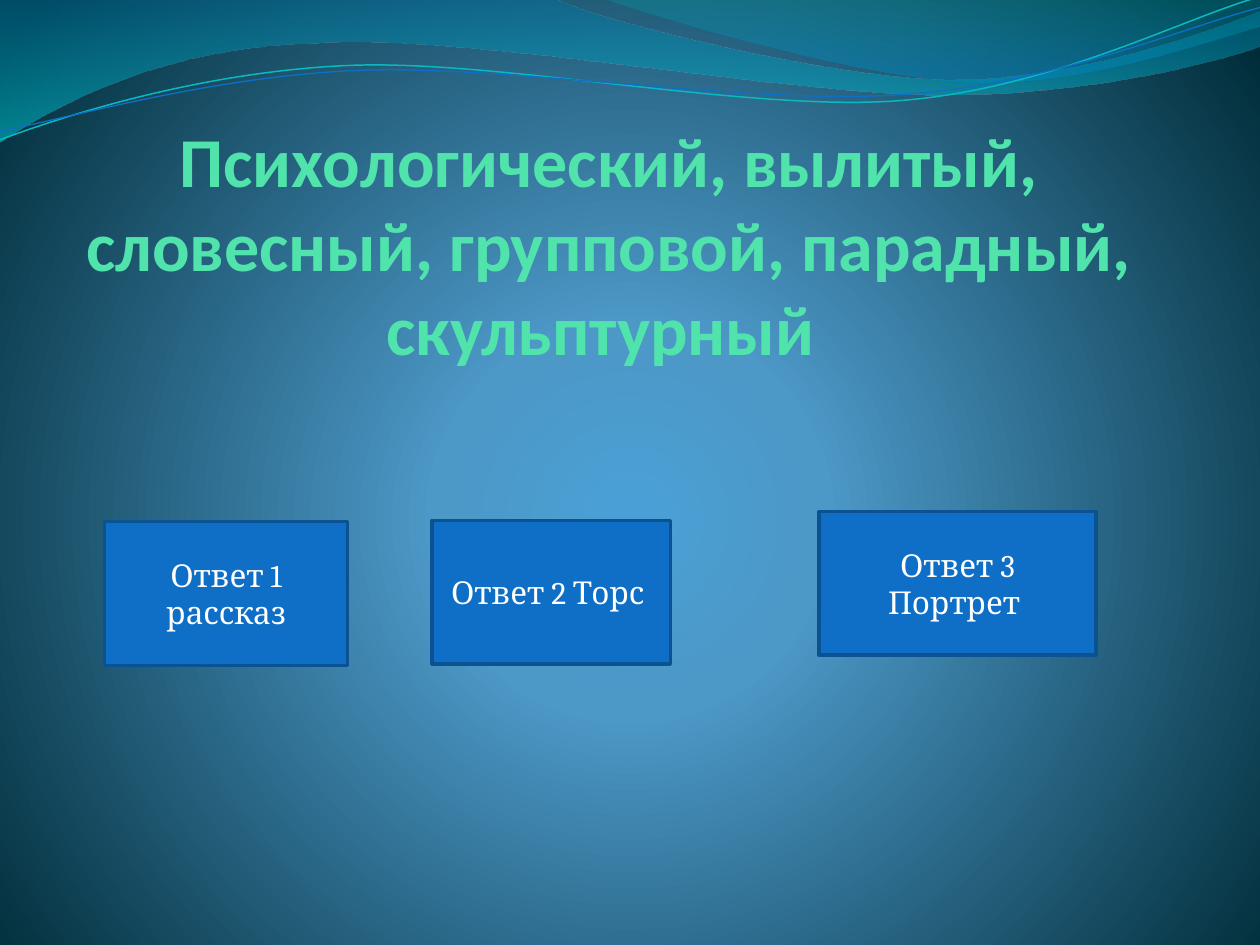
from dataclasses import dataclass

from lxml import etree
from pptx import Presentation
from pptx.dml.color import RGBColor
from pptx.enum.shapes import MSO_SHAPE
from pptx.enum.text import MSO_ANCHOR, MSO_AUTO_SIZE, PP_ALIGN
from pptx.oxml.ns import nsdecls, qn
from pptx.util import Inches, Pt

BUTTON = MSO_SHAPE.ACTION_BUTTON_CUSTOM
CENTER = PP_ALIGN.CENTER
BOTTOM, MIDDLE = MSO_ANCHOR.BOTTOM, MSO_ANCHOR.MIDDLE
NO_AUTOFIT = MSO_AUTO_SIZE.NONE
TITLE_ONLY = 5


@dataclass(frozen=True)
class Theme:
    """Colours, fonts and sizes of the slide."""
    title: str = "50E3AC"
    button: str = "0F6FC6"
    button_line: str = "0B5292"
    button_text: str = "FFFFFF"
    title_font: str = "Calibri"
    button_font: str = "Cambria"
    title_size: int = 40
    button_size: int = 18
    button_line_width: int = 2
    background: tuple = ((0, "4AA0D6", 100), (25, "4C98C7", 100), (100, "002C38", 100))
    left_wave: tuple = ((0, "0074A1", 45), (100, "00C6CF", 55))
    right_wave: tuple = ((0, "00A1A9", 30), (80, "008BBF", 45))
    upper_line: tuple = ("0AB8BF", 0.85)
    lower_line: tuple = ("0F6FC6", 0.75)


THEME = Theme()
LINEAR = '<a:lin ang="5400000" scaled="1"/>'
CIRCLE = ('<a:path path="circle"><a:fillToRect l="10000" t="110000" '
          'r="10000" b="100000"/></a:path>')

LEFT_WAVE = [
    (0, 0), (4.4, -0.01),
    (4.76, 0.17, 6.64, 0.63, 7.58, 0.63), (8.53, 0.63, 9.58, 0.26, 10, 0.09),
    (10.01, 0.36),
    (9.83, 0.44, 8.7, 0.76, 7.46, 0.75), (6.22, 0.75, 3.82, 0.28, 2.57, 0.34),
    (1.29, 0.36, 0.46, 0.83, -0.01, 1.13), (0, 0),
]
RIGHT_WAVE = [
    (4.79, -0.01),
    (5.09, 0.11, 6.82, 0.62, 7.69, 0.65), (8.56, 0.69, 9.61, 0.32, 10, 0.21),
    (10, 0), (4.79, -0.01),
]
UPPER_LINE = [
    (0, 1.11), (0.48, 0.93, 1.58, 0.57, 2.77, 0.52),
    (3.95, 0.47, 5.93, 0.89, 7.13, 0.8), (8.33, 0.71, 9.38, 0.15, 9.98, -0.02),
]
LOWER_LINE = [
    (0, 1.04), (0.47, 0.96, 1.64, 0.61, 2.83, 0.56),
    (4.03, 0.51, 5.97, 0.84, 7.17, 0.75), (8.36, 0.67, 9.41, 0.21, 10, 0.06),
]
TITLE = "Психологический, вылитый, словесный, групповой, парадный, скульптурный "
TITLE_BOX = (0.58, 1.44, 8.5, 1.49)
ANSWERS = [
    (("Ответ 1", "рассказ"), (0.83, 4.14, 1.93, 1.14)),
    (("Ответ 2 Торс ",), (3.43, 4.13, 1.89, 1.14)),
    (("Ответ 3 Портрет ",), (6.5, 4.06, 2.2, 1.14)),
]


def set_gradient(fill, element, stops, direction):
    """Give the fill found in element the listed stops of position, colour and opacity."""
    fill.gradient()
    old = element.find(".//" + qn("a:gradFill"))
    new = etree.fromstring(
        f'<a:gradFill {nsdecls("a")} rotWithShape="1"><a:gsLst/>{direction}</a:gradFill>')
    for position, color, opacity in stops:
        stop = etree.SubElement(new[0], qn("a:gs"), pos=str(position * 1000))
        stop_color = etree.SubElement(stop, qn("a:srgbClr"), val=color)
        if opacity < 100:
            etree.SubElement(stop_color, qn("a:alpha"), val=str(opacity * 1000))
    old.getparent().replace(old, new)


def add_outline(shapes, segments, closed):
    """Add a freeform whose six-number segments are cubic curves."""
    anchors = [(Inches(segment[-2]), Inches(segment[-1])) for segment in segments]
    builder = shapes.build_freeform(*anchors[0], scale=1.0)
    builder.add_line_segments(anchors[1:], close=closed)
    shape = builder.convert_to_shape()
    shape.shadow.inherit = False
    steps = list(shape.element.iter(qn("a:lnTo")))
    for step, segment in zip(steps, segments[1:]):
        if len(segment) == 6:
            curve = etree.Element(qn("a:cubicBezTo"))
            for x, y in zip(segment[::2], segment[1::2]):
                etree.SubElement(curve, qn("a:pt"), x=str(Inches(x) - shape.left),
                                 y=str(Inches(y) - shape.top))
            step.getparent().replace(step, curve)
    return shape


def add_waves(slide):
    """Draw the translucent waves and the two thin lines over them."""
    for segments, stops in ((LEFT_WAVE, THEME.left_wave), (RIGHT_WAVE, THEME.right_wave)):
        wave = add_outline(slide.shapes, segments, True)
        set_gradient(wave.fill, wave.element, stops, LINEAR)
        wave.line.fill.background()
    group = slide.shapes.add_group_shape()
    for segments, (color, width) in ((UPPER_LINE, THEME.upper_line),
                                     (LOWER_LINE, THEME.lower_line)):
        line = add_outline(group.shapes, segments, False)
        line.fill.background()
        line.line.color.rgb = RGBColor.from_string(color)
        line.line.width = Pt(width)


def write_text(shape, lines, color, frame_format, font_format):
    """Write centred paragraphs with the given frame and font formats."""
    frame = shape.text_frame
    for name, value in frame_format.items():
        setattr(frame, name, value)
    frame.text = "\n".join(lines)
    for paragraph in frame.paragraphs:
        paragraph.alignment = CENTER
        font = paragraph.runs[0].font
        font.color.rgb = RGBColor.from_string(color)
        for name, value in font_format.items():
            setattr(font, name, value)


def add_title(slide, box):
    """Place and format the title placeholder above the waves."""
    title = slide.shapes.title
    slide.shapes.element.append(title.element)
    title.left, title.top, title.width, title.height = map(Inches, box)
    frame_format = {"vertical_anchor": BOTTOM, "word_wrap": True, "auto_size": NO_AUTOFIT}
    frame_format.update(dict.fromkeys(
        ("margin_left", "margin_top", "margin_right", "margin_bottom"), 0))
    write_text(title, [TITLE], THEME.title, frame_format,
               {"name": THEME.title_font, "size": Pt(THEME.title_size), "bold": True})


def add_answer(slide, lines, box):
    """Add one answer button in the given box."""
    button = slide.shapes.add_shape(BUTTON, *map(Inches, box))
    button.shadow.inherit = False
    button.fill.solid()
    button.fill.fore_color.rgb = RGBColor.from_string(THEME.button)
    button.line.color.rgb = RGBColor.from_string(THEME.button_line)
    button.line.width = Pt(THEME.button_line_width)
    write_text(button, lines, THEME.button_text,
               {"vertical_anchor": MIDDLE, "word_wrap": True},
               {"name": THEME.button_font, "size": Pt(THEME.button_size)})


def main():
    """Build and save the quiz slide."""
    presentation = Presentation()
    presentation.slide_width, presentation.slide_height = Inches(10), Inches(7.5)
    slide = presentation.slides.add_slide(presentation.slide_layouts[TITLE_ONLY])
    set_gradient(slide.background.fill, slide.element, THEME.background, CIRCLE)
    add_waves(slide)
    add_title(slide, TITLE_BOX)
    for lines, box in ANSWERS:
        add_answer(slide, lines, box)
    presentation.save("out.pptx")


if __name__ == "__main__":
    main()
